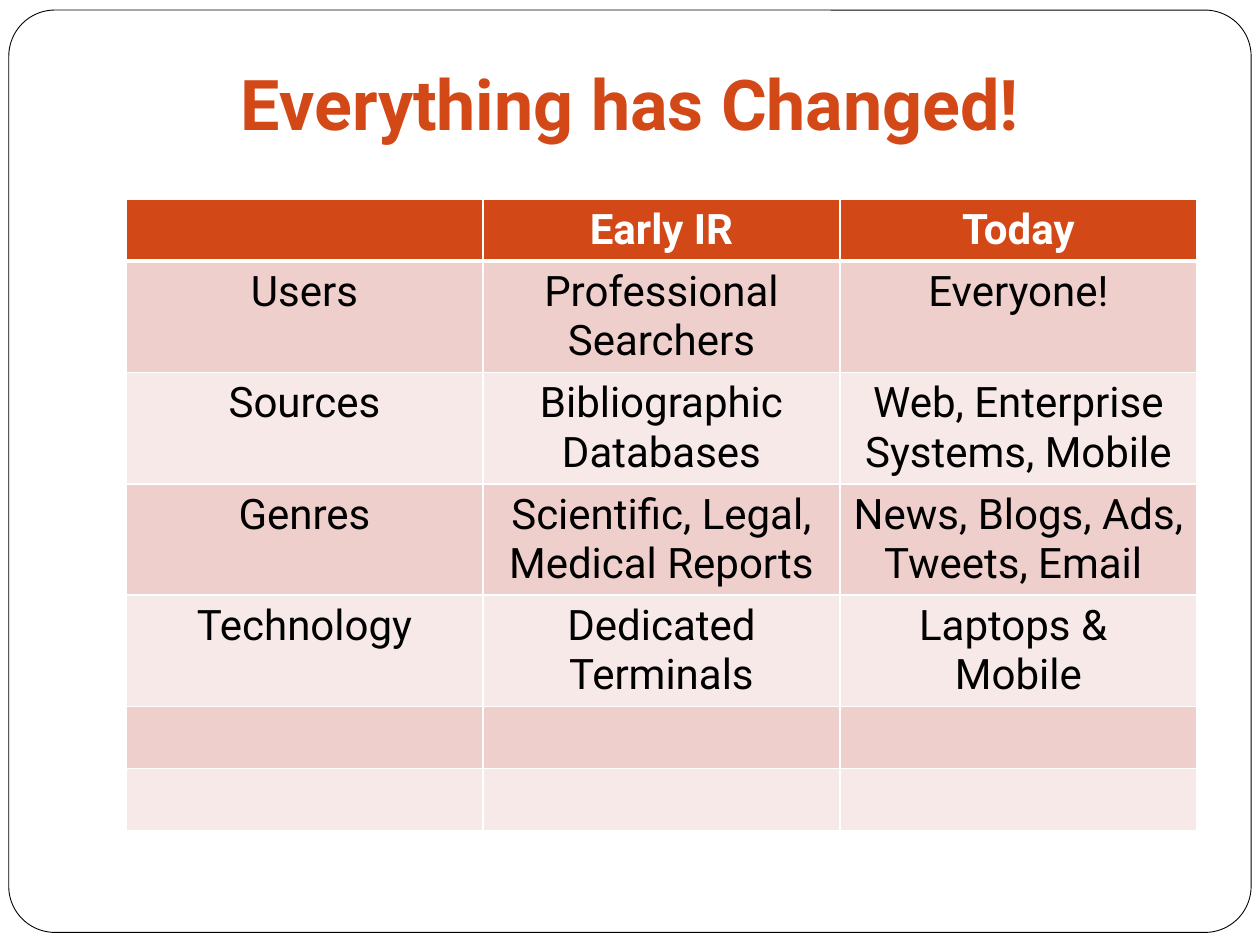
import pptx
import pptx.util
import pptx.oxml
import pptx.oxml.ns
import pptx.dml.color
import pptx.enum.shapes
import pptx.enum.text
from lxml import etree

Inches, Pt = pptx.util.Inches, pptx.util.Pt
RGB = pptx.dml.color.RGBColor.from_string
CENTER = pptx.enum.text.PP_ALIGN.CENTER
COLORS = {"accent": "D34817", "dark": "EFCFCC", "light": "F7E9E8",
          "white": "FFFFFF", "black": "000000"}
FONT = "Roboto"
ROWS = [
    ["", "Early IR", "Today"],
    ["Users", "Professional Searchers", "Everyone!"],
    ["Sources", "Bibliographic\nDatabases", "Web, Enterprise Systems, Mobile"],
    ["Genres", "Scientific, Legal, Medical Reports", "News, Blogs, Ads, Tweets, Email "],
    ["Technology", "Dedicated Terminals", "Laptops & \nMobile"],
    ["", "", ""],
    ["", "", ""],
]


def write(tf, text, size, color, bold):
    tf.text = text
    for p in tf.paragraphs:
        p.alignment = CENTER
        fmt = {"name": FONT, "size": Pt(size), "bold": bold}
        for font in [p.font] + [r.font for r in p.runs]:
            for key, value in fmt.items():
                setattr(font, key, value)
            font.color.rgb = RGB(COLORS[color])


def add_border(cell, side, width):
    """Draw a white line on one side (L, R, T or B); call before filling the cell."""
    tag = pptx.oxml.ns.qn
    ln = etree.SubElement(cell._tc.get_or_add_tcPr(), tag("a:ln" + side), w=str(Pt(width)))
    fill = etree.SubElement(ln, tag("a:solidFill"))
    etree.SubElement(fill, tag("a:srgbClr"), val=COLORS["white"])


prs = pptx.Presentation()
prs.slide_width, prs.slide_height = Inches(10), Inches(7.5)
s = prs.slides.add_slide(prs.slide_layouts[5])

# Rounded page frame, behind everything else
frame = s.shapes.add_shape(pptx.enum.shapes.MSO_SHAPE.ROUNDED_RECTANGLE,
                           Inches(0.07), Inches(0.08), Inches(9.86), Inches(7.32))
frame.adjustments[0] = 0.05
frame.shadow.inherit = False
frame.fill.solid()
frame.fill.fore_color.rgb = RGB(COLORS["white"])
frame.line.color.rgb = RGB(COLORS["black"])
frame.line.width = Pt(0.5)
s.shapes._spTree.insert(2, frame._element)

title = s.shapes.title
title.left, title.top = Inches(0.75), Inches(0)
title.width, title.height = Inches(8.5), Inches(1.25)
tf = title.text_frame
for key, value in {"vertical_anchor": pptx.enum.text.MSO_ANCHOR.BOTTOM, "word_wrap": True,
                   "auto_size": pptx.enum.text.MSO_AUTO_SIZE.NONE,
                   "margin_bottom": Inches(0.1)}.items():
    setattr(tf, key, value)
write(tf, "Everything has Changed!", 40, "accent", True)

# One-line rows are shorter than the two-line body rows
heights = [0.88 if row[0] and i else 0.49 for i, row in enumerate(ROWS)]
table = s.shapes.add_table(len(ROWS), 3, Inches(1), Inches(1.58),
                           Inches(8.5), Inches(sum(heights))).table
for i, (row, height) in enumerate(zip(ROWS, heights)):
    table.rows[i].height = Inches(height)
    header = i == 0
    band = "accent" if header else "dark" if i % 2 else "light"
    for j, text in enumerate(row):
        cell = table.cell(i, j)
        write(cell.text_frame, text, 24, "white" if header else "black", header)
        for side, width in {"L": 1, "R": 1, "T": 3 if i == 1 else 1,
                            "B": 3 if header else 1}.items():
            add_border(cell, side, width)
        cell.fill.solid()
        cell.fill.fore_color.rgb = RGB(COLORS[band])

prs.save("out.pptx")
